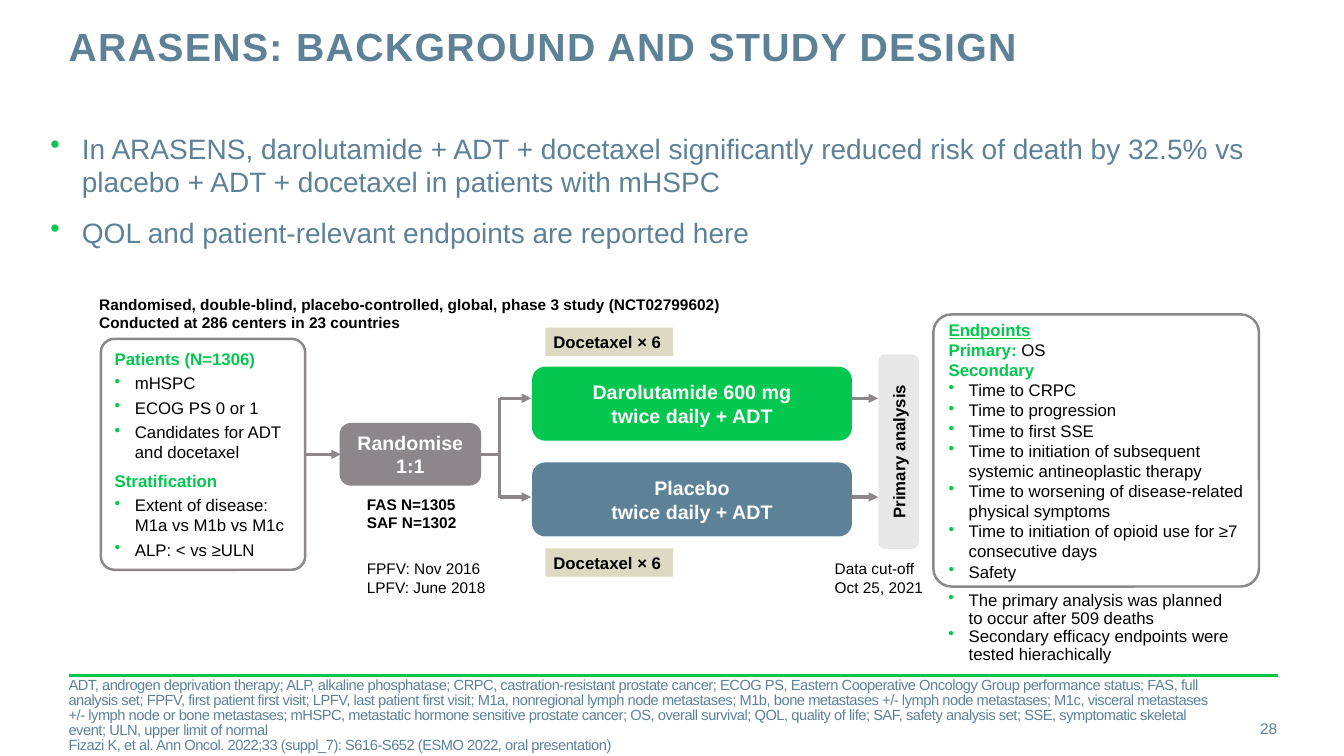
"""Build the ARASENS background and study design slide."""
from lxml.etree import SubElement
from pptx import Presentation
from pptx.dml.color import RGBColor
from pptx.enum.shapes import MSO_CONNECTOR, MSO_SHAPE
from pptx.enum.text import MSO_ANCHOR, PP_ALIGN
from pptx.oxml.ns import qn
from pptx.util import Pt

COLORS = {"green": "03C74F", "slate": "5D8298", "gray": "8B878B", "light": "E8E7E8",
          "sand": "DDD9C3", "black": "000000", "white": "FFFFFF"}
FOOTNOTE = (
    "ADT, androgen deprivation therapy; ALP, alkaline phosphatase; CRPC, castration-resistant prostate cancer; "
    "ECOG PS, Eastern Cooperative Oncology Group performance status; FAS, full analysis set; FPFV, first patient "
    "first visit; LPFV, last patient first visit; M1a, nonregional lymph node metastases; M1b, bone metastases "
    "+/- lymph node metastases; M1c, visceral metastases +/- lymph node or bone metastases; mHSPC, metastatic "
    "hormone sensitive prostate cancer; OS, overall survival; QOL, quality of life; SAF, safety analysis set; "
    "SSE, symptomatic skeletal event; ULN, upper limit of normal")
CITATION = "Fizazi K, et al. Ann Oncol. 2022;33 (suppl_7): S616-S652 (ESMO 2022, oral presentation)"


def color(name):
    """Return the named colour."""
    return RGBColor.from_string(COLORS[name])


def add_bullet(paragraph, indent):
    """Give a paragraph a green bullet with a hanging indent."""
    properties = paragraph._p.get_or_add_pPr()
    properties.set("marL", str(Pt(indent)))
    properties.set("indent", str(-Pt(indent)))
    bullet_color = SubElement(properties, qn("a:buClr"))
    SubElement(bullet_color, qn("a:srgbClr"), val=COLORS["green"])
    SubElement(properties, qn("a:buChar"), char="•")


def write(shape, text, size=12, fill="black", bold=False, underline=False, indent=0, before=0,
          after=0, spacing=1.0, align=PP_ALIGN.LEFT, tracking=0, same_paragraph=False):
    """Append formatted text to a shape, as a new paragraph unless told otherwise."""
    frame = shape.text_frame
    is_first = not frame.text
    paragraph = frame.paragraphs[-1] if is_first or same_paragraph else frame.add_paragraph()
    if not same_paragraph:
        if indent:
            add_bullet(paragraph, indent)
        paragraph.alignment = align
        paragraph.line_spacing = spacing
        paragraph.space_before = Pt(0 if is_first else before)
        paragraph.space_after = Pt(after)
    for index, line in enumerate(text.split("\n")):
        if index:
            paragraph.add_line_break()
        run = paragraph.add_run()
        run.text = line
        font = run.font
        font.name, font.size, font.bold, font.underline = "Arial", Pt(size), bold, underline
        font.color.rgb = color(fill)
        if tracking:
            run._r.get_or_add_rPr().set("spc", str(tracking))


def set_frame(shape, insets, anchor):
    """Set wrapping, insets and anchor of a shape's text."""
    frame = shape.text_frame
    frame.word_wrap = True
    frame.vertical_anchor = anchor
    frame.margin_left, frame.margin_top, frame.margin_right, frame.margin_bottom = map(Pt, insets)


def add_text(slide, left, top, width, height, insets=(0, 0, 0, 0), anchor=MSO_ANCHOR.TOP):
    """Add an empty text box."""
    shape = slide.shapes.add_textbox(Pt(left), Pt(top), Pt(width), Pt(height))
    set_frame(shape, insets, anchor)
    return shape


def add_box(slide, left, top, width, height, fill, line=None, radius=0.0,
            insets=(7.2, 3.6, 7.2, 3.6), anchor=MSO_ANCHOR.MIDDLE):
    """Add a filled box, rounded when a radius is given."""
    kind = MSO_SHAPE.ROUNDED_RECTANGLE if radius else MSO_SHAPE.RECTANGLE
    shape = slide.shapes.add_shape(kind, Pt(left), Pt(top), Pt(width), Pt(height))
    if radius:
        shape.adjustments[0] = radius
    shape.shadow.inherit = False
    shape.fill.solid()
    shape.fill.fore_color.rgb = color(fill)
    if line:
        shape.line.color.rgb = color(line)
        shape.line.width = Pt(1.75)
    else:
        shape.line.fill.background()
    set_frame(shape, insets, anchor)
    return shape


def add_line(slide, start, end, line="gray", width=2.25, arrow=False):
    """Add a straight line, optionally with an arrowhead at its end."""
    connector = slide.shapes.add_connector(MSO_CONNECTOR.STRAIGHT, *map(Pt, start + end))
    connector.line.color.rgb = color(line)
    connector.line.width = Pt(width)
    if arrow:
        SubElement(connector.line._get_or_add_ln(), qn("a:tailEnd"), type="triangle")
    SubElement(connector._element.spPr, qn("a:effectLst"))
    return connector


def add_headings(slide):
    """Add the title, the key messages and the study caption."""
    title = add_text(slide, 49, 19.5, 688, 63)
    write(title, "ARASENS: BACKGROUND AND STUDY DESIGN", size=28, fill="slate", bold=True,
          spacing=Pt(30), tracking=100)
    messages = add_text(slide, 36, 93.6, 863.3, 93.6)
    for message in (
            "In ARASENS, darolutamide + ADT + docetaxel significantly reduced risk of death by 32.5% vs "
            "placebo + ADT + docetaxel in patients with mHSPC",
            "QOL and patient-relevant endpoints are reported here"):
        write(messages, message, size=20, fill="slate", indent=22.5, before=12)
    caption = add_text(slide, 70.8, 210.5, 569, 26.6)
    for line in ("Randomised, double-blind, placebo-controlled, global, phase 3 study (NCT02799602)",
                 "Conducted at 286 centers in 23 countries"):
        write(caption, line, size=11, bold=True)


def add_patients(slide):
    """Add the box of patients and stratification factors."""
    box = add_box(slide, 72, 242, 146, 165, "white", "gray", 0.067)
    groups = (("Patients (N=1306)", ("mHSPC", "ECOG PS 0 or 1", "Candidates for ADT\nand docetaxel")),
              ("Stratification", ("Extent of disease:\nM1a vs M1b vs M1c", "ALP: < vs ≥ULN")))
    for heading, items in groups:
        write(box, heading, fill="green", bold=True, before=3, after=3)
        for item in items:
            write(box, item, indent=14.4, after=3)
    return box


def add_endpoints(slide):
    """Add the endpoints box and the remarks below it."""
    box = add_box(slide, 666.7, 224.6, 232.6, 194.4, "white", "gray", 0.067)
    write(box, "Endpoints", fill="green", bold=True, underline=True)
    write(box, "Primary: ", fill="green", bold=True)
    write(box, "OS", same_paragraph=True)
    write(box, "Secondary", fill="green", bold=True)
    for endpoint in ("Time to CRPC", "Time to progression", "Time to first SSE",
                     "Time to initiation of subsequent systemic antineoplastic therapy",
                     "Time to worsening of disease-related physical symptoms",
                     "Time to initiation of opioid use for ≥7 consecutive days", "Safety"):
        write(box, endpoint, indent=14.4)
    remarks = add_text(slide, 677.5, 419, 232.6, 64, insets=(0, 3.6, 0, 3.6))
    for remark in ("The primary analysis was planned\nto occur after 509 deaths",
                   "Secondary efficacy endpoints were\ntested hierachically"):
        write(remarks, remark, indent=14.4, spacing=0.9)


def add_flow(slide, patients):
    """Add randomisation, both treatment arms and the primary analysis."""
    trunk, arrow_rows = 357, (284.5, 355)
    randomise = add_box(slide, 243.4, 303, 99.4, 43, "gray", "gray", 0.169)
    write(randomise, "Randomise\n1:1", size=14, fill="white", bold=True, align=PP_ALIGN.CENTER, after=3)
    entry = add_line(slide, (218, 324.5), (243.4, 324.5), arrow=True)
    entry.begin_connect(patients, 3)
    entry.end_connect(randomise, 1)
    branch = add_line(slide, (342.8, 324.5), (trunk, 324.5))
    branch.begin_connect(randomise, 3)
    add_line(slide, (trunk, arrow_rows[1] + 1), (trunk, arrow_rows[0]))

    analysis = add_box(slide, 572.4, 308.2, 139, 28.8, "light", radius=0.169)
    analysis.rotation = 270
    write(analysis, "Primary analysis", bold=True, align=PP_ALIGN.CENTER, after=3)

    arms = (("Darolutamide 600 mg\ntwice daily + ADT", "green", 262.8, 234),
            ("Placebo\ntwice daily + ADT", "slate", 331.2, 391.7))
    for (label, fill, top, docetaxel_top), row in zip(arms, arrow_rows):
        for left in (trunk, 604.8):
            add_line(slide, (left, row), (left + 22.4, row), arrow=True)
        arm = add_box(slide, 380.9, top, 226.8, 51.1, fill, fill, 0.169)
        write(arm, label, size=14, fill="white", bold=True, align=PP_ALIGN.CENTER, after=3)
        docetaxel = add_box(slide, 389.5, docetaxel_top, 91.4, 20.2, "sand",
                            insets=(5.8, 2.9, 2.9, 2.9), anchor=MSO_ANCHOR.TOP)
        write(docetaxel, "Docetaxel × 6", bold=True)

    for text, left, top, width, bold in (("FAS N=1305\nSAF N=1302", 262, 353.5, 68.4, True),
                                         ("FPFV: Nov 2016\nLPFV: June 2018", 262, 399.6, 171.4, False),
                                         ("Data cut-off\nOct 25, 2021", 596.2, 399.6, 67.7, False)):
        write(add_text(slide, left, top, width, 26.6), text, size=11, bold=bold)


def add_footer(slide):
    """Add the rule, the abbreviations, the citation and the slide number."""
    add_line(slide, (49, 482.4), (913, 482.4), "green", 2)
    footnote = add_text(slide, 49, 496.8, 828, 28.8, anchor=MSO_ANCHOR.MIDDLE)
    for text in (FOOTNOTE, CITATION):
        write(footnote, text, size=10.5, fill="slate", spacing=0.85, tracking=-30)
    number = add_text(slide, 850.3, 506.2, 62, 28.8, anchor=MSO_ANCHOR.MIDDLE)
    write(number, "28", size=11, fill="slate", align=PP_ALIGN.RIGHT)


def main():
    """Build and save the presentation."""
    presentation = Presentation()
    presentation.slide_width, presentation.slide_height = Pt(960), Pt(540)
    slide = presentation.slides.add_slide(presentation.slide_layouts[6])
    add_headings(slide)
    patients = add_patients(slide)
    add_flow(slide, patients)
    add_endpoints(slide)
    add_footer(slide)
    presentation.save("out.pptx")


if __name__ == "__main__":
    main()
